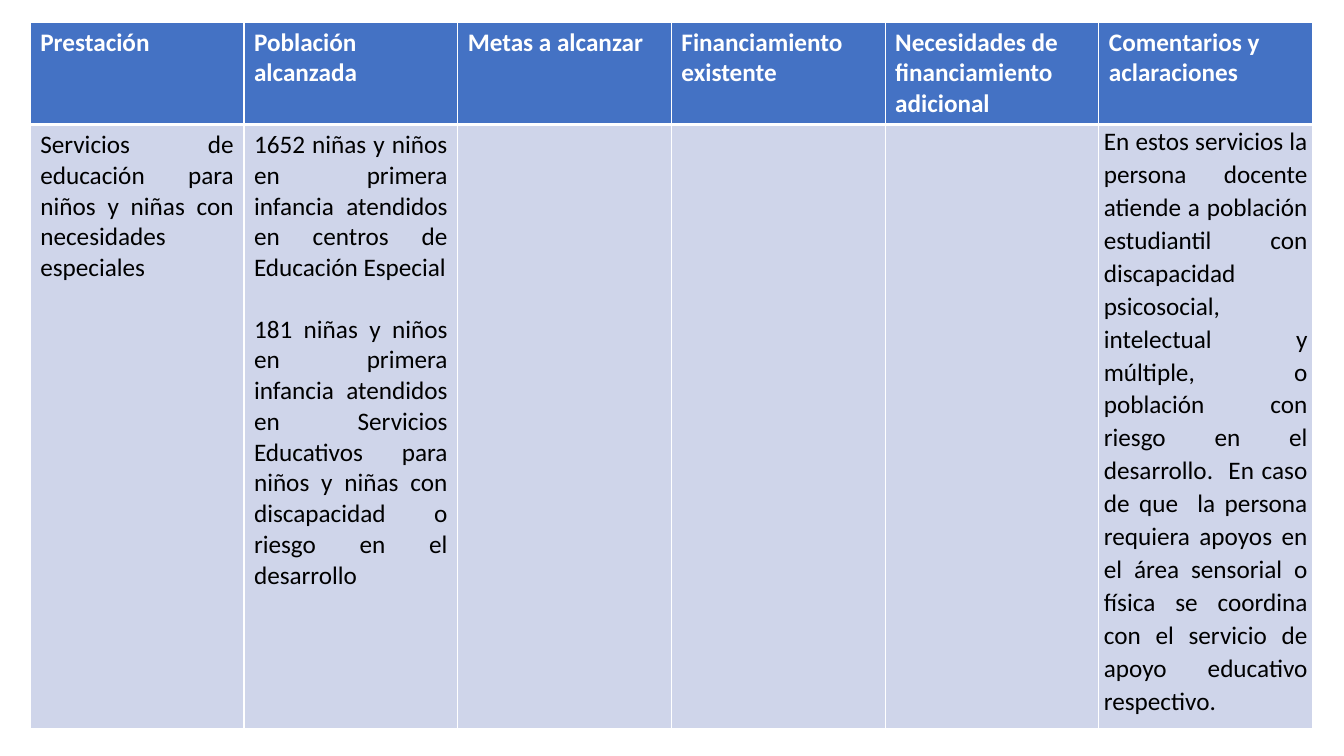
from lxml.etree import SubElement
from pptx import Presentation
from pptx.dml.color import RGBColor
from pptx.enum.text import PP_ALIGN as Align
from pptx.oxml.ns import qn
from pptx.util import Emu, Pt

PX = 9144  # 100 px to the inch
WHITE = RGBColor(0xFF, 0xFF, 0xFF)
BLACK = RGBColor(0x00, 0x00, 0x00)
HEADER_BLUE = RGBColor(0x44, 0x72, 0xC4)
BODY_BLUE = RGBColor(0xCF, 0xD5, 0xEA)

HEADERS = [
    "Prestación", "Población alcanzada", "Metas a alcanzar",
    "Financiamiento existente", "Necesidades de financiamiento adicional",
    "Comentarios y aclaraciones",
]
SERVICE = ["Servicios de educación para niños y niñas con necesidades especiales"]
POPULATION = [
    "1652 niñas y niños en primera infancia atendidos en centros de Educación Especial",
    "181 niñas y niños en primera infancia atendidos en Servicios Educativos para "
    "niños y niñas con discapacidad o riesgo en el desarrollo",
]
COMMENTS = [
    "En estos servicios la persona docente atiende a población estudiantil con "
    "discapacidad psicosocial, intelectual y múltiple, o población con riesgo en el "
    "desarrollo.  En caso de que  la persona requiera apoyos en el área sensorial o "
    "física se coordina con el servicio de apoyo educativo respectivo."
]
BODY = [SERVICE, POPULATION, [], [], [], COMMENTS]


def px(length):
    return Emu(length * PX)


def set_borders(cell, top, bottom):
    """Draw white borders; widths are in points, the sides are 1 pt."""
    properties = cell._tc.get_or_add_tcPr()
    for side, width in (("L", 1), ("R", 1), ("T", top), ("B", bottom)):
        line = SubElement(properties, qn(f"a:ln{side}"), w=str(Pt(width)))
        fill = SubElement(line, qn("a:solidFill"))
        SubElement(fill, qn("a:srgbClr"), val=str(WHITE))


def fill_cell(cell, texts, background, color, bold, align):
    cell.fill.solid()
    cell.fill.fore_color.rgb = background
    frame = cell.text_frame
    frame.text = "\n".join(texts)
    for paragraph in frame.paragraphs:
        paragraph.alignment = align
        font = paragraph.font
        font.name, font.size, font.bold = "Calibri", Pt(18), bold
        font.color.rgb = color
    # One line of space between paragraphs
    for paragraph in frame.paragraphs[:-1]:
        paragraph.space_after = Pt(22)


def add_services_table(slide, left, top, width, header_height, body_height):
    columns = len(HEADERS)
    table = slide.shapes.add_table(
        2, columns, px(left), px(top), px(width), px(header_height + body_height)
    ).table
    table.rows[0].height = px(header_height)
    table.rows[1].height = px(body_height)
    for index, (header, texts) in enumerate(zip(HEADERS, BODY)):
        table.columns[index].width = px(width // columns)
        header_cell, body_cell = table.cell(0, index), table.cell(1, index)
        set_borders(header_cell, top=1, bottom=3)
        set_borders(body_cell, top=3, bottom=1)
        fill_cell(header_cell, [header], HEADER_BLUE, WHITE, True, Align.LEFT)
        fill_cell(body_cell, texts, BODY_BLUE, BLACK, False, Align.JUSTIFY)

    # The comments sit closer to the cell edges, with looser lines
    comments = table.cell(1, columns - 1)
    comments.margin_left = comments.margin_right = px(5)
    comments.margin_top = comments.margin_bottom = 0
    paragraph = comments.text_frame.paragraphs[0]
    paragraph.line_spacing = 1.07
    paragraph.space_after = Pt(8)


def main():
    presentation = Presentation()
    presentation.slide_width, presentation.slide_height = px(1333), px(750)
    slide = presentation.slides.add_slide(presentation.slide_layouts[6])
    add_services_table(slide, left=30, top=22, width=1272,
                       header_height=101, body_height=599)
    presentation.save("out.pptx")


if __name__ == "__main__":
    main()
